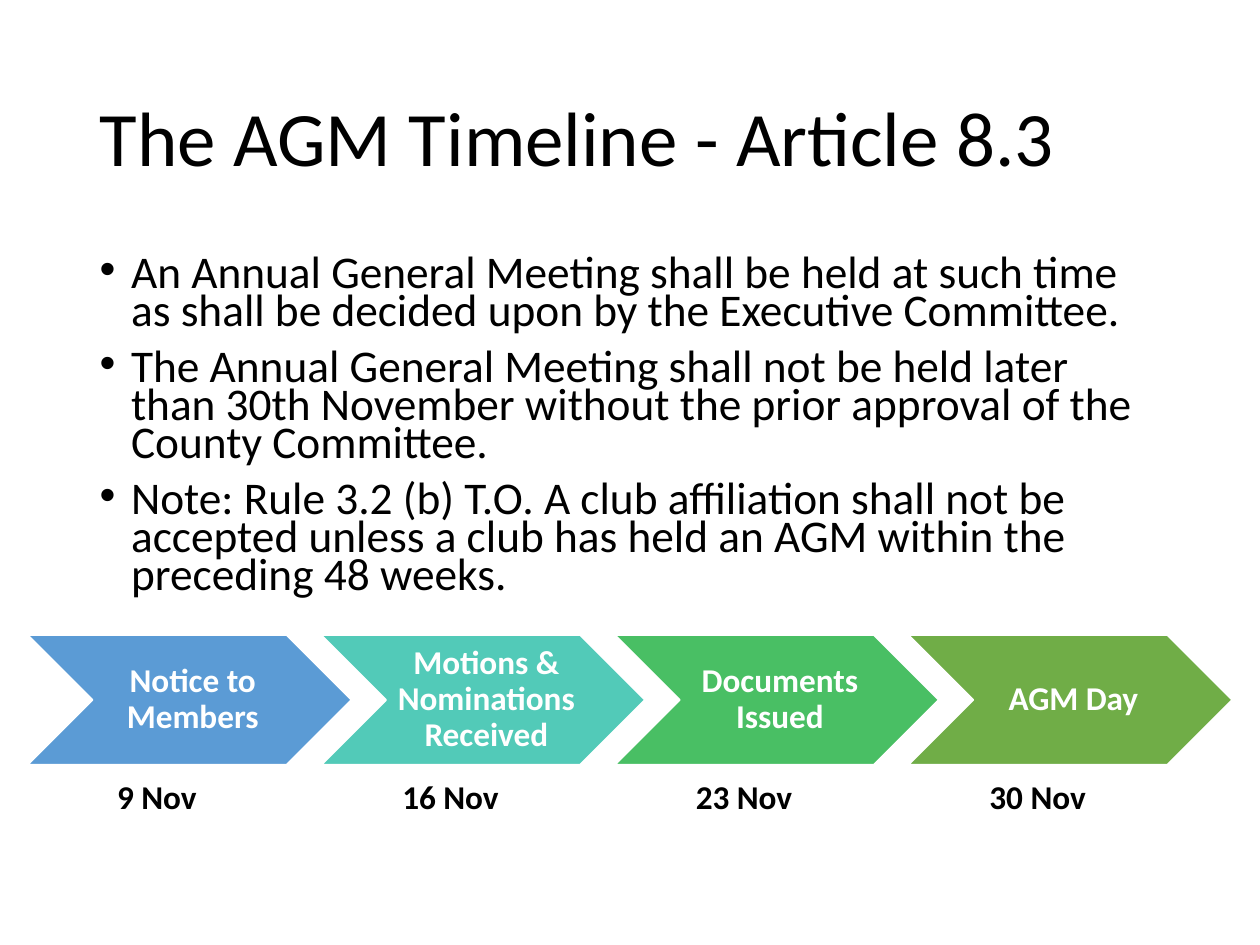
from pptx import Presentation
from pptx.dml.color import RGBColor
from pptx.enum.shapes import MSO_SHAPE
from pptx.enum.text import MSO_ANCHOR, MSO_AUTO_SIZE, PP_ALIGN
from pptx.oxml.ns import qn
from pptx.util import Inches, Pt
from lxml import etree

CHEVRON = MSO_SHAPE.CHEVRON
MIDDLE, TOP = MSO_ANCHOR.MIDDLE, MSO_ANCHOR.TOP
LEFT, CENTER = PP_ALIGN.LEFT, PP_ALIGN.CENTER
NO_FIT = MSO_AUTO_SIZE.NONE


def rgb(value):
    return RGBColor.from_string(value)


def format_text(tf, size, color, anchor, align, spacing, bold=False):
    tf.word_wrap = True
    tf.auto_size = NO_FIT
    tf.vertical_anchor = anchor
    for p in tf.paragraphs:
        p.alignment = align
        p.line_spacing = spacing
        for r in p.runs:
            r.font.name = "Calibri"
            r.font.size = Pt(size)
            r.font.bold = bold
            r.font.color.rgb = rgb(color)


prs = Presentation()
prs.slide_width, prs.slide_height = Inches(10), Inches(7.5)
slide = prs.slides.add_slide(prs.slide_layouts[1])

# Title
margin, content_width = Inches(0.69), Inches(8.62)
title = slide.shapes.title
title.left, title.top = margin, Inches(0.4)
title.width, title.height = content_width, Inches(1.45)
title.text_frame.text = "The AGM Timeline - Article 8.3"
format_text(title.text_frame, 44, "000000", MIDDLE, LEFT, 0.9)

# Rules
rules = [
    "An Annual General Meeting shall be held at such time as shall be decided "
    "upon by the Executive Committee.",
    "The Annual General Meeting shall not be held later than 30th November "
    "without the prior approval of the County Committee.",
    "Note: Rule 3.2 (b) T.O. A club affiliation shall not be accepted unless "
    "a club has held an AGM within the preceding 48 weeks.",
]
body = slide.placeholders[1]
body.left, body.top = margin, Inches(2)
body.width, body.height = content_width, Inches(2.95)
tf = body.text_frame
tf.text = "\n".join(rules)
for i, p in enumerate(tf.paragraphs):
    pPr = p._p.get_or_add_pPr()
    pPr.set("marL", str(Inches(0.25)))
    pPr.set("indent", str(-Inches(0.25)))
    etree.SubElement(pPr, qn("a:buFont")).set("typeface", "Arial")
    etree.SubElement(pPr, qn("a:buChar")).set("char", "•")
    p.space_before = Pt(10 if i else 0)
format_text(tf, 25.9, "000000", TOP, LEFT, 0.7)

# Timeline: one chevron per step with its date below
steps = [
    ("Notice to Members", "9 Nov", "5B9BD5"),
    ("Motions & Nominations Received", "16 Nov", "52CAB8"),
    ("Documents Issued", "23 Nov", "49BF64"),
    ("AGM Day", "30 Nov", "70AD47"),
]
start, pitch = Inches(0.22), Inches(2.33)
for i, (step, date, color) in enumerate(steps):
    left = start + i * pitch

    sp = slide.shapes.add_shape(CHEVRON, left, Inches(5.04), Inches(2.57), Inches(1.03))
    sp.shadow.inherit = False
    sp.fill.solid()
    sp.fill.fore_color.rgb = rgb(color)
    sp.line.color.rgb = rgb("FFFFFF")
    sp.line.width = Pt(1)
    tf = sp.text_frame
    tf.text = step
    tf.margin_left = Inches(0.08)
    tf.margin_top = tf.margin_right = tf.margin_bottom = Inches(0.03)
    format_text(tf, 19, "FFFFFF", MIDDLE, CENTER, 0.9, bold=True)

    label = slide.shapes.add_textbox(left, Inches(6.2), Inches(2.05), Inches(0.37))
    tf = label.text_frame
    tf.text = date
    tf.margin_left = tf.margin_top = tf.margin_right = tf.margin_bottom = 0
    format_text(tf, 19, "000000", TOP, CENTER, 0.9, bold=True)

prs.save("out.pptx")
